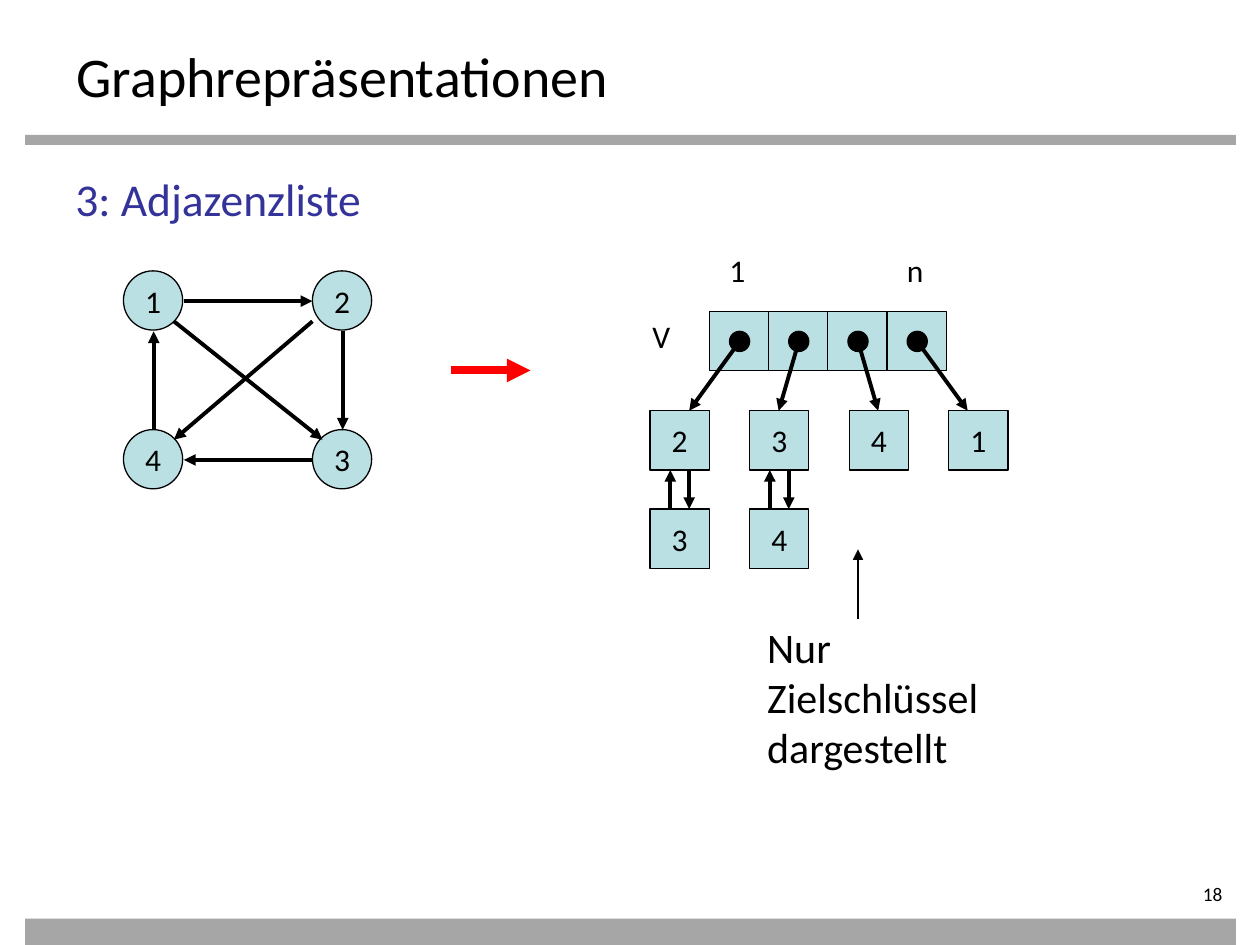
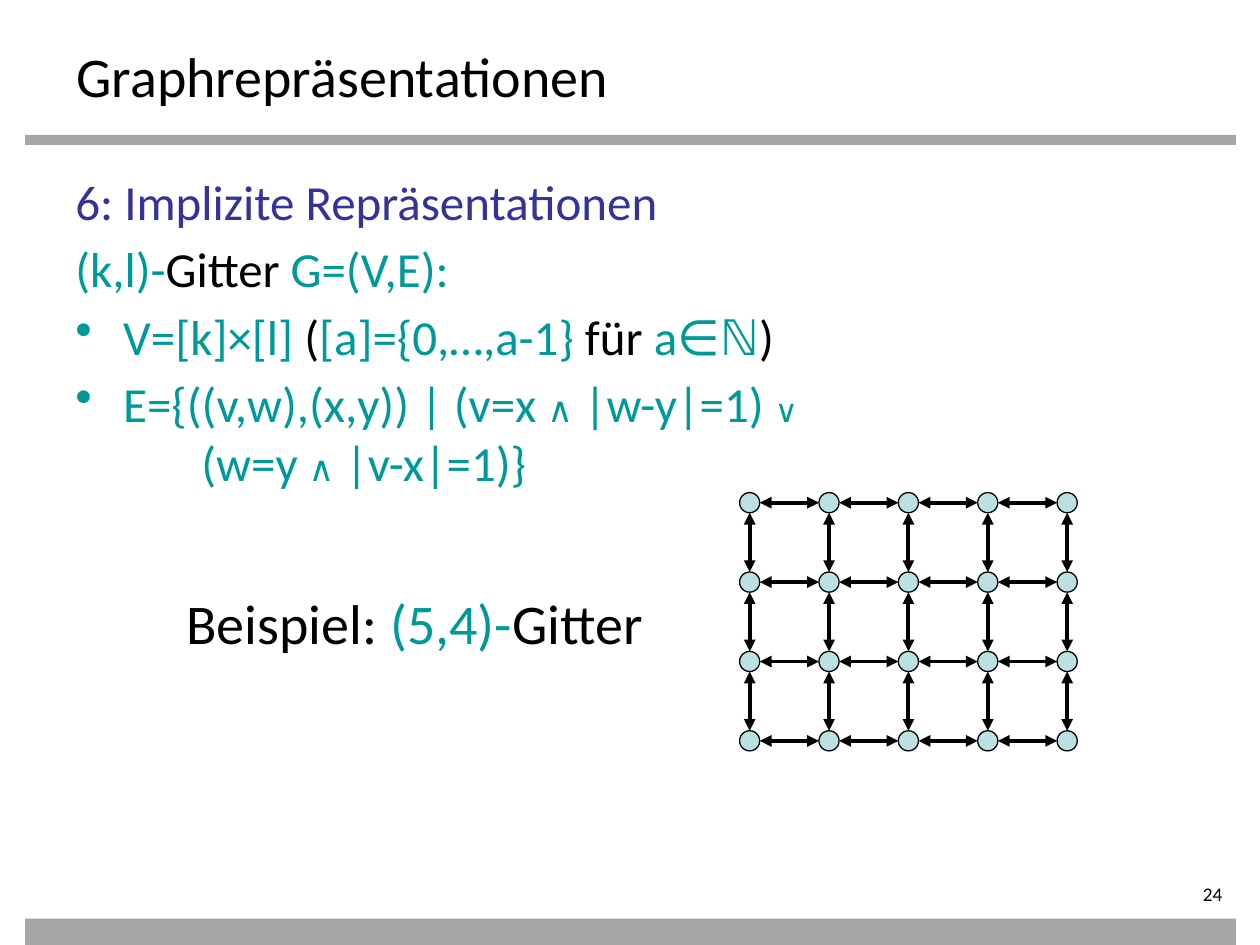
from pptx import Presentation
from pptx.dml.color import RGBColor
from pptx.enum.shapes import MSO_CONNECTOR, MSO_SHAPE
from pptx.enum.text import MSO_ANCHOR, PP_ALIGN
from pptx.oxml.ns import qn
from pptx.util import Inches, Pt
from lxml import etree

RECT, OVAL = MSO_SHAPE.RECTANGLE, MSO_SHAPE.OVAL
STRAIGHT = MSO_CONNECTOR.STRAIGHT
MIDDLE = MSO_ANCHOR.MIDDLE
CENTER, RIGHT = PP_ALIGN.CENTER, PP_ALIGN.RIGHT

BLACK = RGBColor(0x00, 0x00, 0x00)
GRAY = RGBColor(0xA6, 0xA6, 0xA6)
BLUE = RGBColor(0x33, 0x33, 0x99)
TEAL = RGBColor(0x00, 0x99, 0x99)
PALE = RGBColor(0xBB, 0xE0, 0xE3)
RED = RGBColor(0xFF, 0x00, 0x00)

FONT = "Calibri"
CELL = 0.47
DOT = 0.16
INDENT = 0.38


class Deck:
    """Holds the shared style and the slide being drawn."""

    def __init__(self):
        self.prs = Presentation()
        self.prs.slide_width = Inches(10)
        self.prs.slide_height = Inches(7.5)

    def new_slide(self, title, number):
        self.s = self.prs.slides.add_slide(self.prs.slide_layouts[6])
        for top, height in ((1.07, 0.08), (7.29, 0.21)):
            self.shape(RECT, 0.2, top, 9.61, height, GRAY, outlined=False)
        tf = self.text(8.7, 7, 1.1, 0.22, str(number), 11)
        tf.margin_left = tf.margin_top = tf.margin_bottom = 0
        tf.paragraphs[0].alignment = RIGHT
        self.text(0.51, 0.28, 9, 0.55, title, 32)

    def style(self, runs, size, color=BLACK):
        for r in runs:
            r.font.name = FONT
            r.font.size = Pt(size)
            r.font.color.rgb = color

    def text(self, x, y, w, h, text, size, wrap=False):
        box = self.s.shapes.add_textbox(Inches(x), Inches(y), Inches(w), Inches(h))
        tf = box.text_frame
        tf.word_wrap = wrap
        tf.text = text
        self.style(tf.paragraphs[0].runs, size)
        return tf

    def runs(self, p, parts, size):
        """Add (text, colour[, size]) parts to a paragraph."""
        for text, color, *own_size in parts:
            r = p.add_run()
            r.text = text
            self.style([r], own_size[0] if own_size else size, color)

    def body(self, paragraphs, size):
        """Add (left, hanging, bullet, space before, parts) paragraphs."""
        tf = self.text(0.5, 1.31, 9, 5.43, "", size, wrap=True)
        for i, (left, hanging, bullet, before, parts) in enumerate(paragraphs):
            p = tf.add_paragraph() if i else tf.paragraphs[0]
            if before:
                p.space_before = Pt(before)
            ppr = p._p.get_or_add_pPr()
            ppr.set("marL", str(Inches(left)))
            ppr.set("indent", str(-Inches(hanging)))
            if bullet:
                etree.SubElement(ppr, qn("a:buChar")).set("char", bullet)
            self.runs(p, parts, size)

    def shape(self, kind, x, y, w, h, fill, text="", outlined=True):
        sp = self.s.shapes.add_shape(kind, Inches(x), Inches(y), Inches(w), Inches(h))
        sp.shadow.inherit = False
        sp.fill.solid()
        sp.fill.fore_color.rgb = fill
        if outlined:
            sp.line.color.rgb = BLACK
            sp.line.width = Pt(0.75)
        else:
            sp.line.fill.background()
        if text:
            tf = sp.text_frame
            tf.word_wrap = False
            tf.vertical_anchor = MIDDLE
            tf.text = text
            tf.paragraphs[0].alignment = CENTER
            self.style(tf.paragraphs[0].runs, 18)

    def arrow(self, x1, y1, x2, y2, color=BLACK, width=2.25, both=False):
        c = self.s.shapes.add_connector(
            STRAIGHT, Inches(x1), Inches(y1), Inches(x2), Inches(y2))
        c.line.color.rgb = color
        c.line.width = Pt(width)
        ln = c.line._get_or_add_ln()
        for end in ("a:headEnd", "a:tailEnd") if both else ("a:tailEnd",):
            etree.SubElement(ln, qn(end)).set("type", "triangle")
        etree.SubElement(c._element.spPr, qn("a:effectLst"))


def adjacency_list(deck):
    deck.new_slide("Graphrepräsentationen", 18)
    deck.body([(INDENT, INDENT, "", 0, [("3: Adjazenzliste", BLUE)])], 26)

    # Directed graph
    for key, x, y in (("1", 0.98, 2.15), ("2", 2.48, 2.15),
                      ("4", 0.98, 3.41), ("3", 2.48, 3.41)):
        deck.shape(OVAL, x, y, CELL, CELL, PALE, key)
    for edge in ((1.46, 2.39, 2.48, 2.39), (2.72, 2.63, 2.72, 3.41),
                 (2.48, 3.65, 1.46, 3.65), (1.22, 3.41, 1.22, 2.63),
                 (1.38, 2.55, 2.56, 3.49), (2.48, 2.55, 1.38, 3.49)):
        deck.arrow(*edge)
    deck.arrow(3.58, 2.94, 4.21, 2.94, RED, 4.5)

    # Vertex array with one linked list per cell
    lists = (("23", 5.47), ("34", 6.18), ("4", 6.97), ("1", 7.68))
    for i, (keys, target) in enumerate(lists):
        cell_x = 5.63 + i * CELL
        list_x = 5.16 + i * 0.79
        deck.shape(RECT, cell_x, 2.47, CELL, CELL, PALE)
        deck.shape(OVAL, cell_x + DOT, 2.63, DOT, DOT, BLACK)
        deck.arrow(cell_x + 0.24, 2.71, target, 3.26)
        for row, key in enumerate(keys):
            deck.shape(RECT, list_x, 3.26 + row * 0.78, CELL, CELL, PALE, key)
        if len(keys) > 1:
            deck.arrow(list_x + 0.31, 3.73, list_x + 0.31, 4.04)
            deck.arrow(list_x + 0.16, 4.04, list_x + 0.16, 3.73)

    # Labels
    for label, x, y, w in (("V", 5.08, 2.47, 0.37), ("1", 5.69, 1.94, 0.34),
                           ("n", 7.1, 1.94, 0.34)):
        deck.text(x, y, w, 0.4, label, 18)
    deck.arrow(6.81, 4.91, 6.81, 4.36, width=0.75)
    deck.text(5.99, 4.88, 1.96, 1.31, "Nur\vZielschlüssel\vdargestellt", 24)


def implicit_grid(deck):
    deck.new_slide("Graphrepräsentationen", 24)
    deck.body([
        (INDENT, INDENT, "", 0, [("6: Implizite Repräsentationen", BLUE)]),
        (INDENT, INDENT, "", 5, [
            ("(k,l)-", TEAL), ("Gitter ", BLACK), ("G=(V,E):", TEAL)]),
        (INDENT, INDENT, "•", 5, [
            ("V=[k]×[l]", TEAL), (" (", BLACK), ("[a]={0,…,a-1}", TEAL),
            (" für ", BLACK), ("a∈ℕ", TEAL), (")", BLACK)]),
        (INDENT, INDENT, "•", 5, [
            ("E={((v,w),(x,y)) | (v=x ", TEAL), ("∧", TEAL, 20),
            (" |w-y|=1) ", TEAL), ("∨", TEAL, 18)]),
        (1, 0, "", 0, [
            ("(w=y ", TEAL), ("∧", TEAL, 20), (" |v-x|=1)}", TEAL)]),
    ], 28)

    # Grid of nodes joined to their right and lower neighbours
    columns, rows, pitch = 5, 4, 0.63
    radius = DOT / 2
    for row in range(rows):
        for col in range(columns):
            x, y = 5.95 + col * pitch, 3.99 + row * pitch
            deck.shape(OVAL, x - radius, y - radius, DOT, DOT, PALE)
            if col < columns - 1:
                deck.arrow(x + radius, y, x + pitch - radius, y, both=True)
            if row < rows - 1:
                deck.arrow(x, y + radius, x, y + pitch - radius, both=True)

    # Caption
    tf = deck.text(1.38, 4.62, 4.15, 0.63, "Beispiel: ", 32)
    deck.runs(tf.paragraphs[0], [("(5,4)-", TEAL), ("Gitter", BLACK)], 32)


def main():
    deck = Deck()
    adjacency_list(deck)
    implicit_grid(deck)
    deck.prs.save("out.pptx")


if __name__ == "__main__":
    main()
